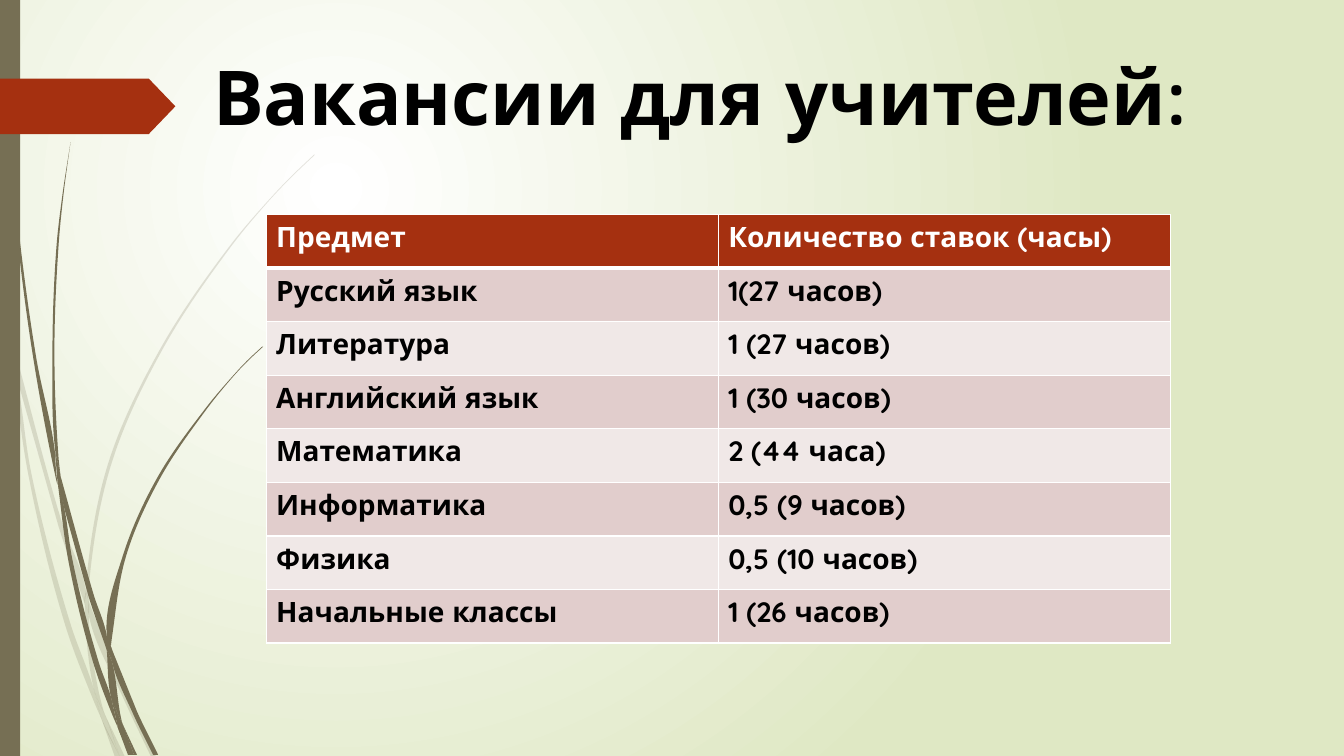
import math

import lxml.etree
import pptx
import pptx.dml.color
import pptx.enum.shapes
import pptx.enum.text
import pptx.oxml
import pptx.util

PX = 9144  # EMU per px, 100 px to the inch
WIDTH, HEIGHT = 1333, 750
FONT = "Quicksand"
OLIVE, RED, WHITE, BLACK = "766F54", "A53010", "FFFFFF", "000000"
BANDS = ["E1CDCC", "F0E8E7"]
NS = 'xmlns:a="http://schemas.openxmlformats.org/drawingml/2006/main"'
P_NS = 'xmlns:p="http://schemas.openxmlformats.org/presentationml/2006/main"'

VACANCIES = [
    ("Предмет", "Количество ставок (часы)"),
    ("Русский язык", "1(27 часов)"),
    ("Литература", "1 (27 часов)"),
    ("Английский язык", "1 (30 часов)"),
    ("Математика", "2 (44 часа)"),
    ("Информатика", "0,5 (9 часов)"),
    ("Физика", "0,5 (10 часов)"),
    ("Начальные классы", "1 (26 часов)"),
]

# Outlines of the grass parts, as corner points
PALE_GRASS = [
    [(11, 350), (9, 322), (0, 282), (0, 299), (10, 344)],
    [(58, 522), (84, 599), (85, 586), (62, 520), (14, 345), (17, 376)],
    [(92, 607), (88, 596), (88, 610), (123, 694), (150, 751), (155, 751), (127, 692)],
    [(119, 751), (124, 751), (105, 711)],
    [(93, 683), (70, 619), (31, 469), (17, 376), (11, 350), (28, 470), (65, 621), (92, 693),
     (101, 714), (99, 707)],
    [(84, 599), (87, 646), (93, 683), (96, 692), (105, 711), (103, 706), (91, 646), (88, 610),
     (88, 608)],
    [(88, 584), (110, 462), (160, 349), (229, 245), (268, 198), (290, 175), (312, 154),
     (312, 153), (289, 175), (268, 197), (228, 244), (158, 348), (107, 461), (85, 584),
     (85, 586), (88, 596)],
    [(101, 714), (114, 751), (119, 751)],
    [(88, 608), (88, 610), (88, 596), (85, 586), (84, 599)],
    [(96, 692), (93, 683), (99, 707), (101, 714), (119, 751), (105, 711)],
]
DARK_GRASS = [
    [(7, 110), (17, 233), (33, 355), (56, 477), (57, 481), (55, 457), (55, 453), (36, 355),
     (19, 232), (8, 109), (5, 48), (4, 0), (3, 0), (4, 48)],
    [(88, 592), (106, 645), (106, 633), (106, 631), (93, 590), (60, 472), (64, 505)],
    [(113, 649), (110, 641), (111, 656), (132, 708), (152, 749), (157, 749), (136, 706)],
    [(110, 691), (98, 657), (72, 556), (64, 505), (57, 477), (68, 557), (93, 659), (111, 708),
     (117, 722), (116, 717)],
    [(60, 472), (58, 453), (54, 349), (58, 245), (63, 193), (70, 141), (62, 193), (56, 245),
     (52, 349), (55, 449)],
    [(133, 749), (136, 749), (122, 719)],
    [(57, 477), (64, 505), (60, 472), (55, 449), (55, 453)],
    [(111, 633), (125, 552), (158, 476), (205, 406), (231, 374), (245, 359), (261, 344),
     (260, 344), (245, 358), (231, 373), (204, 405), (156, 474), (122, 551), (106, 631),
     (110, 641)],
    [(117, 722), (127, 749), (131, 749)],
    [(106, 645), (110, 691), (116, 706), (122, 719), (121, 716), (111, 656), (109, 651)],
    [(106, 645), (109, 651), (111, 656), (110, 641), (106, 631), (106, 633)],
    [(116, 706), (110, 691), (116, 717), (117, 722), (130, 749), (133, 749), (122, 719)],
]


def color(value):
    return pptx.dml.color.RGBColor.from_string(value)


def emu(*lengths):
    return [pptx.util.Emu(round(n * PX)) for n in lengths]


def paint(shape, value, opacity=100):
    shape.shadow.inherit = False
    shape.fill.solid()
    shape.fill.fore_color.rgb = color(value)
    shape.line.fill.background()
    if opacity < 100:
        clr = shape.fill._xPr.find(".//" + pptx.oxml.ns.qn("a:srgbClr"))
        lxml.etree.SubElement(clr, pptx.oxml.ns.qn("a:alpha"), val=str(opacity * 1000))


def add_run(p, text, size, value):
    r = p.add_run()
    r.text = text
    r.font.name = FONT
    r.font.size = pptx.util.Pt(size)
    r.font.bold = True
    r.font.color.rgb = color(value)
    return r


def handle(before, at, after):
    """Direction of a smooth curve at a point; None at a sharp corner."""
    a, b = math.atan2(at[1] - before[1], at[0] - before[0]), math.atan2(after[1] - at[1], after[0] - at[0])
    turn = math.remainder(b - a, math.tau)
    return a + turn / 2 if abs(turn) < 0.6 else None


def curve_outline(shape):
    """Turn the straight sides of a freeform into curves through its points."""
    qn = pptx.oxml.ns.qn
    outline = shape._element.find(".//" + qn("a:path"))
    pts = [(int(pt.get("x")), int(pt.get("y"))) for pt in outline.iter(qn("a:pt"))]
    n = len(pts)
    angles = [handle(pts[i - 1], pts[i], pts[(i + 1) % n]) for i in range(n)]
    for i, side in enumerate(outline.findall(qn("a:lnTo"))):
        (x0, y0), (x1, y1) = pts[i], pts[i + 1]
        reach, straight = math.hypot(x1 - x0, y1 - y0) / 3, math.atan2(y1 - y0, x1 - x0)
        a, b = (straight if v is None else v for v in (angles[i], angles[i + 1]))
        knots = [(x0 + reach * math.cos(a), y0 + reach * math.sin(a)),
                 (x1 - reach * math.cos(b), y1 - reach * math.sin(b)), (x1, y1)]
        points = "".join(f'<a:pt x="{round(x)}" y="{round(y)}"/>' for x, y in knots)
        outline.replace(side, pptx.oxml.parse_xml(f"<a:cubicBezTo {NS}>{points}</a:cubicBezTo>"))


def add_background(s):
    stops = "".join(f'<a:gs pos="{pos}"><a:srgbClr val="{value}"/></a:gs>'
                    for pos, value in ((0, WHITE), (100000, "DFE8C4")))
    s._element.cSld.insert(0, pptx.oxml.parse_xml(
        f'<p:bg {NS} {P_NS}><p:bgPr><a:gradFill rotWithShape="1"><a:gsLst>{stops}</a:gsLst>'
        '<a:path path="circle"><a:fillToRect l="50000" t="50000" r="100000" b="100000"/></a:path>'
        '</a:gradFill><a:effectLst/></p:bgPr></p:bg>'))


def add_grass(s, x, y, outlines, opacity):
    grass = s.shapes.add_group_shape()
    for outline in outlines:
        points = [tuple(emu(x + px, y + py)) for px, py in outline]
        builder = grass.shapes.build_freeform(*points[0], scale=1.0)
        builder.add_line_segments(points[1:], close=True)
        part = builder.convert_to_shape()
        curve_outline(part)
        paint(part, OLIVE, opacity)


def add_side_bar(s, x, y, w, h):
    shapes = pptx.enum.shapes.MSO_SHAPE
    paint(s.shapes.add_shape(shapes.RECTANGLE, *emu(x, y, w, h)), OLIVE)
    arrow = s.shapes.add_shape(shapes.PENTAGON, *emu(x, y + 78, 174, 55))
    arrow.adjustments[0] = 0.48
    paint(arrow, RED)


def add_title(s, x, y, w, h, text):
    title = s.shapes.title
    title.left, title.top, title.width, title.height = emu(x, y, w, h)
    tf = title.text_frame
    tf.word_wrap = True
    tf.auto_size = pptx.enum.text.MSO_AUTO_SIZE.SHAPE_TO_FIT_TEXT
    tf.vertical_anchor = pptx.enum.text.MSO_ANCHOR.TOP
    p = tf.paragraphs[0]
    p.alignment = pptx.enum.text.PP_ALIGN.CENTER
    r = add_run(p, text, 54, BLACK)
    r._r.get_or_add_rPr().insert(0, pptx.oxml.parse_xml(
        f'<a:ln {NS} w="9525"><a:solidFill><a:srgbClr val="{WHITE}"/></a:solidFill></a:ln>'))


def add_borders(cell, top, bottom):
    tcPr = cell._tc.get_or_add_tcPr()
    for i, (side, pt) in enumerate((("L", 1), ("R", 1), ("T", top), ("B", bottom))):
        tcPr.insert(i, pptx.oxml.parse_xml(
            f'<a:ln{side} {NS} w="{pt * 12700}"><a:solidFill><a:srgbClr val="{WHITE}"/>'
            f'</a:solidFill></a:ln{side}>'))


def add_vacancies(s, x, y, w, h, rows):
    table = s.shapes.add_table(len(rows), len(rows[0]), *emu(x, y, w, h)).table
    for i, texts in enumerate(rows):
        table.rows[i].height = emu(h / len(rows))[0]
        for j, text in enumerate(texts):
            cell = table.cell(i, j)
            cell.fill.solid()
            cell.fill.fore_color.rgb = color(BANDS[(i - 1) % 2] if i else RED)
            add_borders(cell, 3 if i == 1 else 1, 1 if i else 3)
            add_run(cell.text_frame.paragraphs[0], text, 20, BLACK if i else WHITE)


def main():
    prs = pptx.Presentation()
    prs.slide_width, prs.slide_height = emu(WIDTH + 1 / 3, HEIGHT)
    s = prs.slides.add_slide(prs.slide_layouts[5])
    # Backdrop
    add_background(s)
    add_grass(s, 0, 0, PALE_GRASS, 20)
    add_grass(s, 0, 0, DARK_GRASS, 100)
    add_side_bar(s, 0, 0, 20, HEIGHT)
    # Content
    add_title(s, 192, 44, 1005, 101, "Вакансии для учителей:")
    add_vacancies(s, 264, 213, 897, 425, VACANCIES)
    prs.save("out.pptx")


if __name__ == "__main__":
    main()
